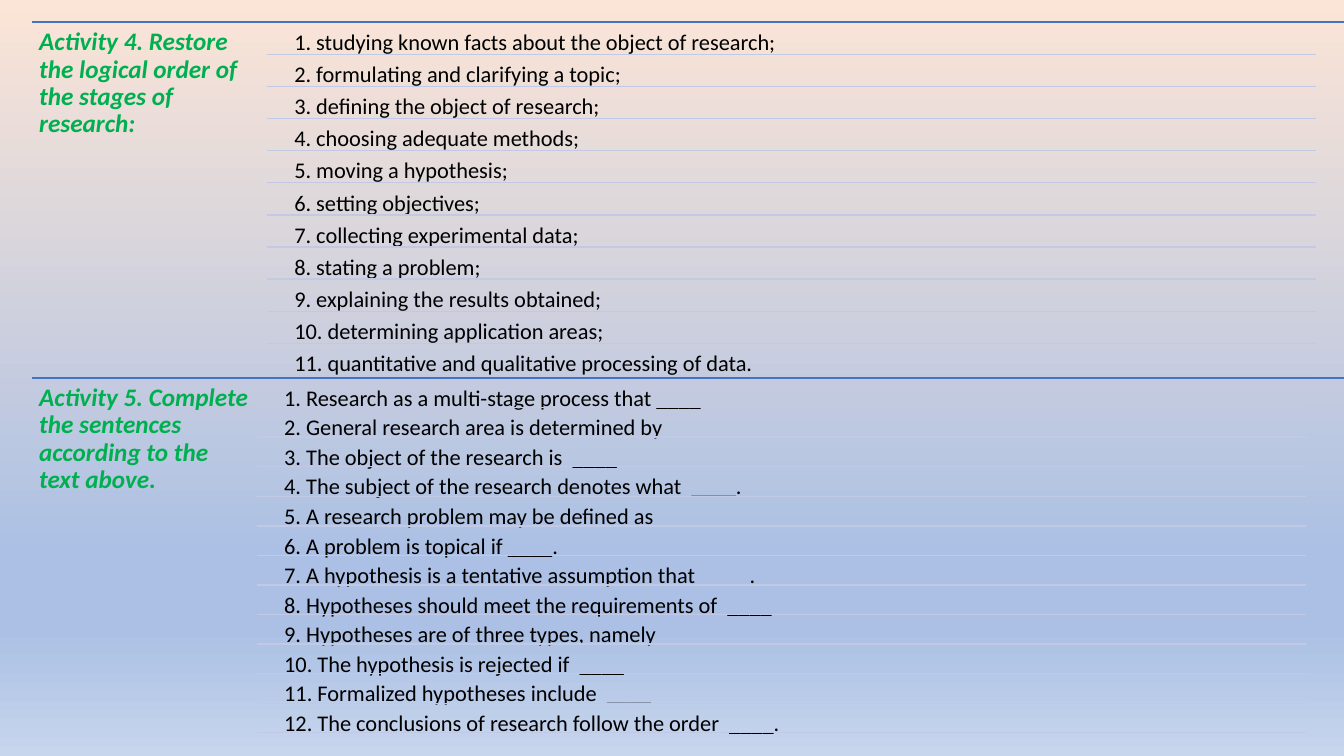
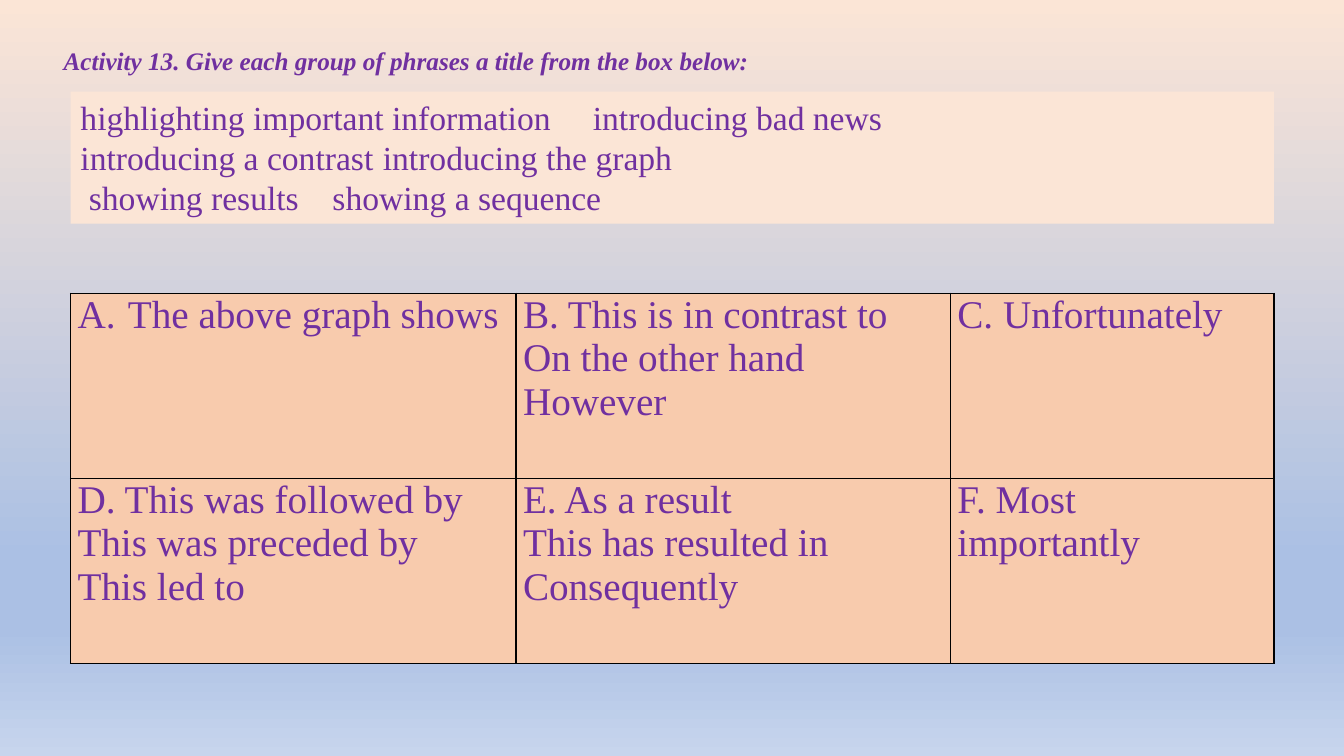
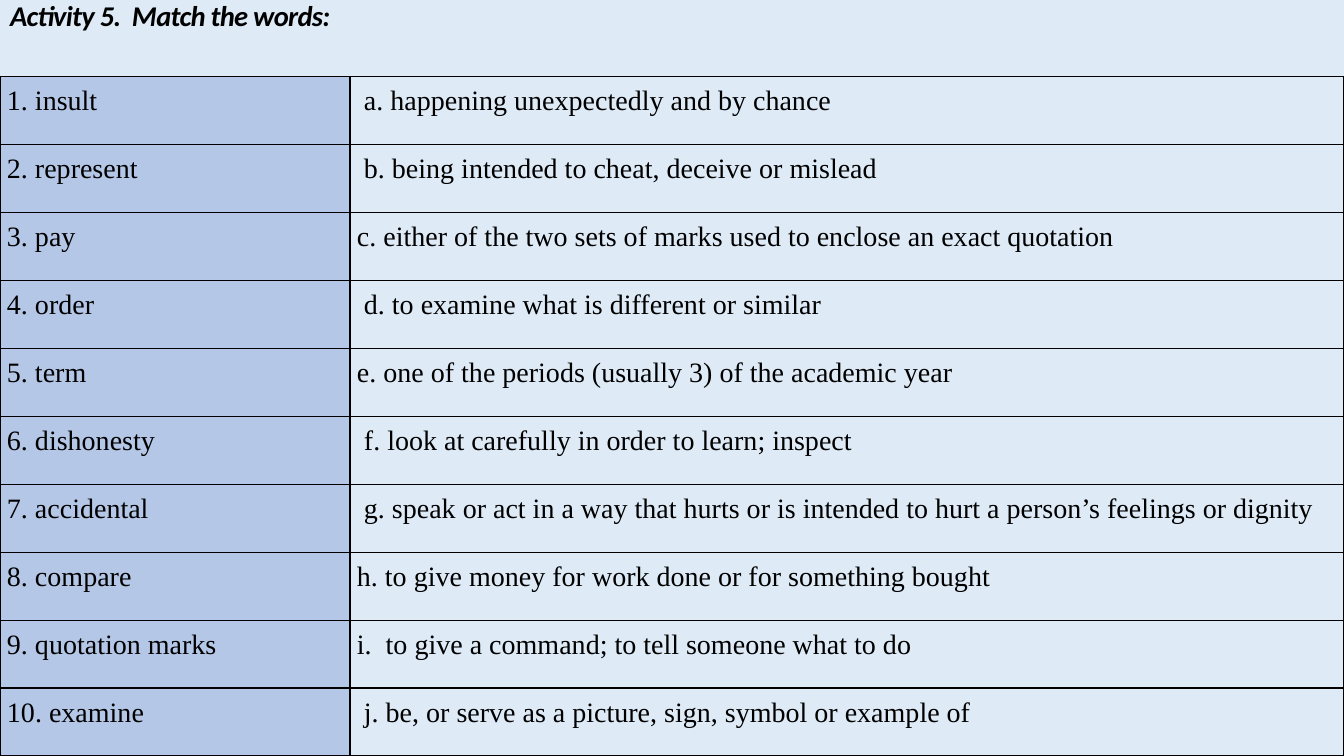
from lxml import etree
from pptx import Presentation
from pptx import util as u
from pptx.dml.color import RGBColor
from pptx.enum import shapes, text
from pptx.oxml.ns import qn

COLORS = {
    "black": "000000", "green": "00B050", "purple": "7030A0",
    "blue": "4472C4", "rule": "C1C9E4", "cream": "FBE5D6",
    "peach": "F8CBAD", "pale": "DEEBF7", "sky": "B4C7E7",
}
BACKGROUND = [(0, "FBE5D6"), (74, "ABC0E4"), (83, "ABC0E4"), (100, "C7D5ED")]
WIDTH, HEIGHT = 960, 540
SANS, SERIF = "Calibri", "Times New Roman"
TWO_CONTENT, TITLE_ONLY = 3, 5

STAGES = [
    "studying known facts about the object of research;",
    "formulating and clarifying a topic;",
    "defining the object of research;",
    "choosing adequate methods;",
    "moving a hypothesis;",
    "setting objectives;",
    "collecting experimental data;",
    "stating a problem;",
    "explaining the results obtained;",
    "determining application areas;",
    "quantitative and qualitative processing of data.",
]
SENTENCES = [
    "Research as a multi-stage process that ____",
    "General research area is determined by  ____",
    "The object of the research is  ____",
    "The subject of the research denotes what  ____.",
    "A research problem may be defined as  ____",
    "A problem is topical if ____.",
    "A hypothesis is a tentative assumption that  ____.",
    "Hypotheses should meet the requirements of  ____",
    "Hypotheses are of three types, namely  ____",
    "The hypothesis is rejected if  ____",
    "Formalized hypotheses include  ____",
    "The conclusions of research follow the order  ____.",
]
PHRASES = [
    ("highlighting important information", " introducing bad news"),
    ("introducing a contrast", "introducing the graph"),
    (" showing results", "showing a sequence"),
]
GROUPS = [
    [["A.\tThe above graph shows"],
     ["B. This is in contrast to", "On the other hand", "However"],
     ["C. Unfortunately"]],
    [["D. This was followed by", "This was preceded by", "This led to"],
     ["E. As a result", "This has resulted in", "Consequently"],
     ["F. Most importantly"]],
]
WORDS = [
    ("insult", " a. happening unexpectedly and by chance"),
    ("represent", " b. being intended to cheat, deceive or mislead"),
    ("pay", "c. either of the two sets of marks used to enclose an exact quotation"),
    ("order", " d. to examine what is different or similar"),
    ("term", "e. one of the periods (usually 3) of the academic year"),
    ("dishonesty", " f. look at carefully in order to learn; inspect"),
    ("accidental", " g. speak or act in a way that hurts or is intended to hurt "
                   "a person’s feelings or dignity"),
    ("compare", "h. to give money for work done or for something bought"),
    ("quotation marks", "i.  to give a command; to tell someone what to do"),
    ("examine", " j. be, or serve as a picture, sign, symbol or example of"),
]


def rgb(name):
    return RGBColor.from_string(COLORS[name])


def numbered(items):
    return [f"{number}. {item}" for number, item in enumerate(items, 1)]


class Deck:
    def __init__(self):
        self.deck = Presentation()
        self.deck.slide_width, self.deck.slide_height = u.Pt(WIDTH), u.Pt(HEIGHT)
        self.slide = None
        self.paint_master()

    def paint_master(self):
        master = self.deck.slide_master
        fill = master.background.fill
        fill.gradient()
        fill.gradient_angle = 270
        stops = next(master.element.iter(qn("a:gsLst")))
        stops.clear()
        for position, color in BACKGROUND:
            stop = etree.SubElement(stops, qn("a:gs"), pos=str(position * 1000))
            etree.SubElement(stop, qn("a:srgbClr"), val=color)

    def add_slide(self, layout):
        self.slide = self.deck.slides.add_slide(self.deck.slide_layouts[layout])

    def set_lines(self, frame, lines, size, color="black", font=SANS, strong=False,
                  spacing=1.0, tab=None, tracking=None):
        """Fill a text frame; strong means bold italic, a Pt spacing is exact."""
        frame.word_wrap = True
        frame.text = "\n".join(lines)
        for para in frame.paragraphs:
            para.alignment = text.PP_ALIGN.LEFT
            para.line_spacing = spacing
            para.space_before = para.space_after = u.Pt(0)
            properties = para._p.get_or_add_pPr()
            properties.set("marL", "0")
            properties.set("indent", "0")
            etree.SubElement(properties, qn("a:buNone"))
            if tab:
                stops = etree.SubElement(properties, qn("a:tabLst"))
                etree.SubElement(stops, qn("a:tab"), pos=str(u.Pt(tab)), algn="l")
            for span in para.runs:
                span.font.name, span.font.size = font, u.Pt(size)
                span.font.bold = span.font.italic = strong
                span.font.color.rgb = rgb(color)
                if tracking:
                    span._r.get_or_add_rPr().set("spc", str(tracking))

    def fit(self, box, place, lines, margins=(7.2, 3.6), **style):
        """Move a text shape to its place and fill it from the top."""
        box.left, box.top, box.width, box.height = map(u.Pt, place)
        frame = box.text_frame
        frame.auto_size = text.MSO_AUTO_SIZE.NONE
        frame.vertical_anchor = text.MSO_ANCHOR.TOP
        frame.margin_left = frame.margin_right = u.Pt(margins[0])
        frame.margin_top = frame.margin_bottom = u.Pt(margins[1])
        self.set_lines(frame, lines, **style)

    def title(self, words, place, fill=None, **style):
        box = self.slide.shapes.title
        if fill:
            box.fill.solid()
            box.fill.fore_color.rgb = rgb(fill)
        self.fit(box, place, [words], strong=True, **style)

    def textbox(self, words, place, **style):
        box = self.slide.shapes.add_textbox(0, 0, 0, 0)
        self.fit(box, place, [words], **style)

    def panel(self, lines, place, fill, **style):
        box = self.slide.shapes.add_shape(shapes.MSO_SHAPE.RECTANGLE, 0, 0, 0, 0)
        box.shadow.inherit = False
        box.fill.solid()
        box.fill.fore_color.rgb = rgb(fill)
        box.line.fill.background()
        self.fit(box, place, lines, **style)

    def rule(self, left, right, y, color):
        line = self.slide.shapes.add_connector(
            shapes.MSO_CONNECTOR.STRAIGHT, u.Pt(left), u.Pt(y), u.Pt(right), u.Pt(y))
        line.line.color.rgb = rgb(color)
        line.line.width = u.Pt(1)
        etree.SubElement(line.element.spPr, qn("a:effectLst"))

    def ruled_list(self, index, items, left, top, pitch):
        """Numbered list under a blue line, with a thin rule below every row."""
        self.rule(23, WIDTH, top, "blue")
        place = (left + 14.4, top + 23.4 - pitch, 735, pitch * len(items))
        self.fit(self.slide.placeholders[index], place, numbered(items),
                 margins=(5, 0), size=16, spacing=u.Pt(pitch))
        for row in range(1, len(items) + 1):
            self.rule(left, left + 749.5, top + row * pitch, "rule")

    def table(self, rows, left, top, widths, row_height, fills, margin_y, **style):
        """Bordered table; a cell is a list of lines, fills go by column."""
        table = self.slide.shapes.add_table(
            len(rows), len(widths), u.Pt(left), u.Pt(top),
            u.Pt(sum(widths)), u.Pt(row_height * len(rows))).table
        for column, width in zip(table.columns, widths):
            column.width = u.Pt(width)
        for r, row in enumerate(rows):
            table.rows[r].height = u.Pt(row_height)
            for c, lines in enumerate(row):
                cell = table.cell(r, c)
                cell.margin_left = cell.margin_right = u.Pt(5)
                cell.margin_top = cell.margin_bottom = u.Pt(margin_y)
                self.border(cell)
                cell.fill.solid()
                cell.fill.fore_color.rgb = rgb(fills[c])
                self.set_lines(cell.text_frame, lines, font=SERIF, **style)

    def border(self, cell):
        properties = cell._tc.get_or_add_tcPr()
        for side in ("lnL", "lnR", "lnT", "lnB"):
            line = etree.SubElement(properties, qn(f"a:{side}"), w=str(u.Pt(1)))
            fill = etree.SubElement(line, qn("a:solidFill"))
            etree.SubElement(fill, qn("a:srgbClr"), val=COLORS["black"])


def research_slide(deck):
    deck.add_slide(TWO_CONTENT)
    heading = dict(margins=(5, 5), size=18, color="green", spacing=0.9)
    first, second = 15.8, 270
    deck.title("Activity 4. Restore the logical order of the stages of research:",
               (23, first, 168, 254), **heading)
    deck.ruled_list(1, STAGES, 190.8, first, 22.95)
    deck.textbox("Activity 5. Complete the sentences according to the text above.",
                 (23, second, 161, 254), strong=True, **heading)
    deck.ruled_list(2, SENTENCES, 183.6, second, 21.12)


def phrases_slide(deck):
    deck.add_slide(TITLE_ONLY)
    deck.title("Activity 13. Give each group of phrases a title from the box below:",
               (38.2, 28.8, 811, 28.8), size=18, color="purple", font=SERIF)
    deck.panel(["\t".join(pair) for pair in PHRASES], (50.4, 65.5, 859.6, 94.3),
               "cream", size=24, color="purple", font=SERIF,
               spacing=u.Pt(28.8), tab=412.5)
    deck.table(GROUPS, 50.4, 209.5, (318.2, 310.3, 231.1), 132.2, ["peach"] * 3, 0,
               size=28, color="purple", spacing=u.Pt(31), tab=40.3)


def words_slide(deck):
    deck.add_slide(TITLE_ONLY)
    top = 54.7
    deck.title("Activity 5.  Match the words:", (0, 0, WIDTH, top), fill="pale",
               size=20.4, spacing=0.8, tracking=-50)
    words, meanings = zip(*WORDS)
    rows = [([word], [meaning]) for word, meaning in zip(numbered(words), meanings)]
    deck.table(rows, 0, top, (250, 710), (HEIGHT - top) / len(rows),
               ("sky", "pale"), 5, size=20, spacing=1.07)


def main():
    deck = Deck()
    research_slide(deck)
    phrases_slide(deck)
    words_slide(deck)
    deck.deck.save("out.pptx")


if __name__ == "__main__":
    main()
